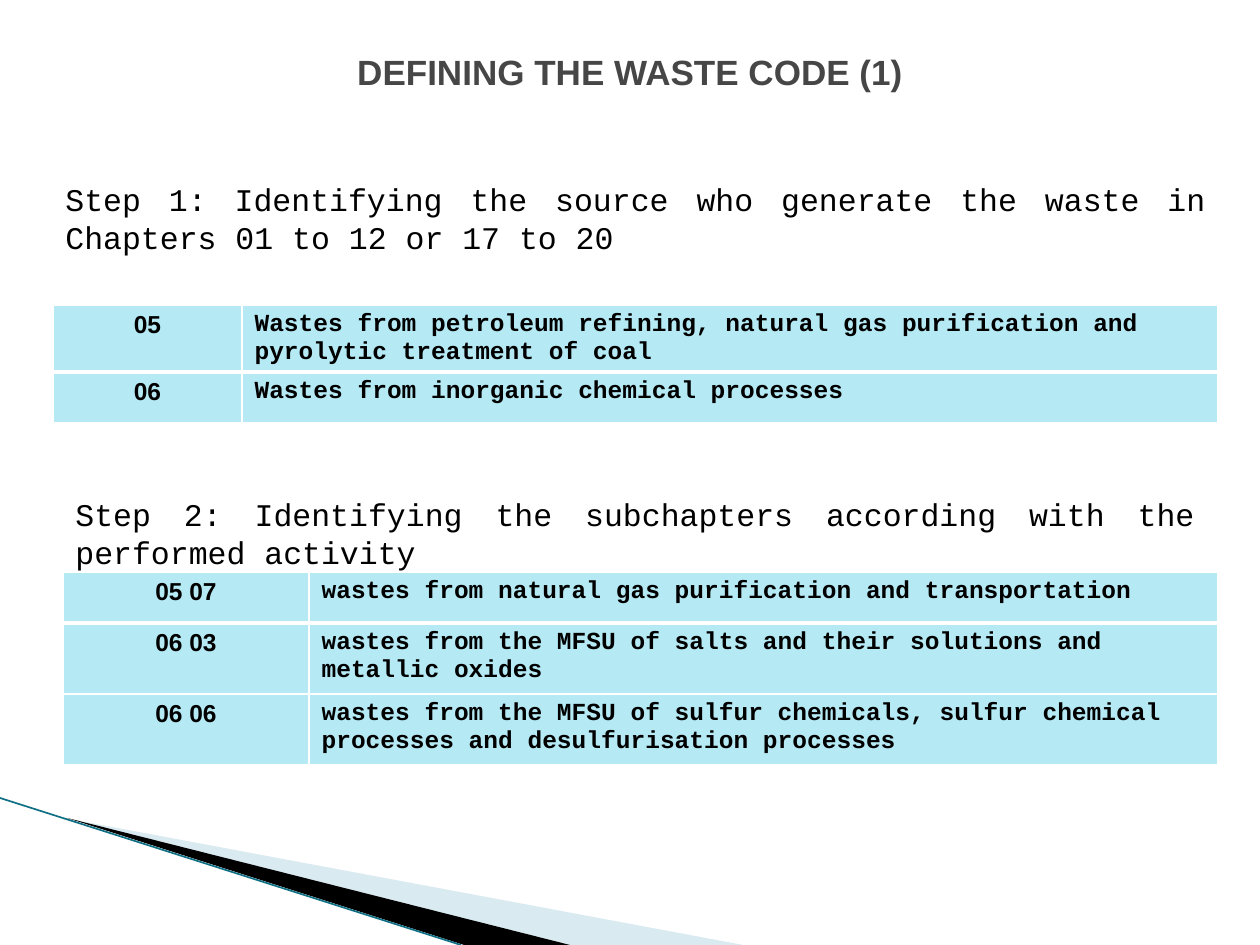
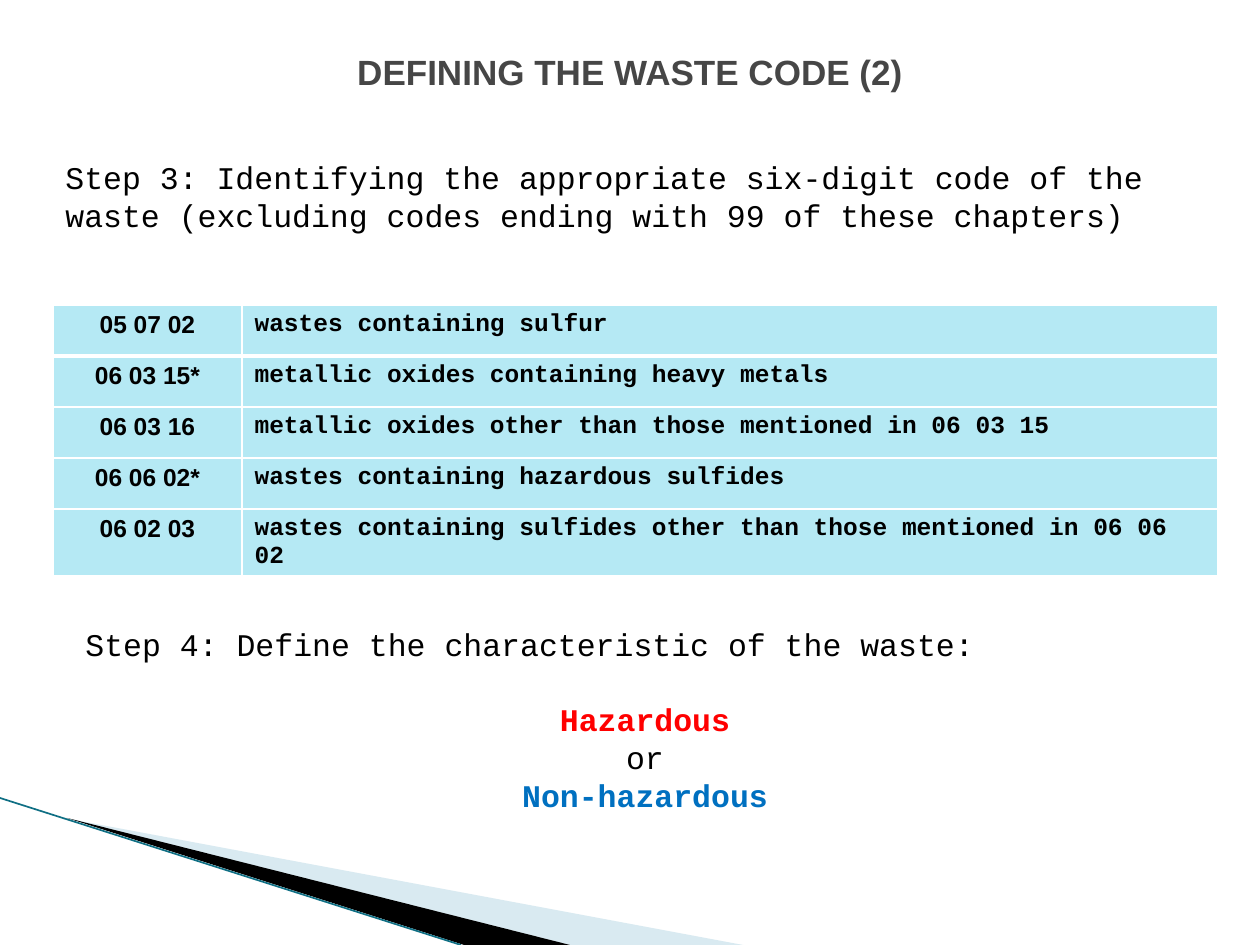
from dataclasses import dataclass
from typing import NamedTuple

from lxml.etree import SubElement
from pptx import Presentation
from pptx.dml.color import RGBColor
from pptx.enum.shapes import MSO_CONNECTOR
from pptx.enum.text import MSO_ANCHOR as Anchor, PP_ALIGN as Align
from pptx.oxml.ns import qn
from pptx.util import Emu, Pt

EMU_PER_PX = 914400 / 126
COLORS = {
    "title": "464646",
    "text": "000000",
    "cell": "B5E9F4",
    "border": "FFFFFF",
    "pale_wedge": "A0CBDC",
    "black_wedge": "000000",
    "edge": "0F6F84",
    "hazardous": "FF0000",
    "safe": "0070C0",
}
SANS, MONO = "Arial", "Courier New"


class Box(NamedTuple):
    """Position and size in px."""

    left: int
    top: int
    width: int
    height: int


class Line(NamedTuple):
    """One paragraph of a step."""

    text: str
    align: Align = Align.LEFT
    color: str = "text"
    bold: bool = False
    before: float = 0


@dataclass
class Step:
    """A step description and where it stands."""

    box: Box
    lines: list[Line]


@dataclass
class CodeTable:
    """Waste codes with their descriptions."""

    left: int
    top: int
    code_width: int
    text_width: int
    row_heights: list[int]
    rows: list[tuple[str, str]]


@dataclass
class Page:
    """Content of one slide."""

    title: str
    steps: list[Step]
    tables: list[CodeTable]


PAGES = [
    Page(
        "DEFINING THE WASTE CODE (1)",
        [
            Step(Box(53, 174, 1165, 82), [Line(
                "Step 1: Identifying the source who generate the waste in "
                "Chapters 01 to 12 or 17 to 20", Align.JUSTIFY)]),
            Step(Box(63, 489, 1144, 82), [Line(
                "Step 2: Identifying the subchapters according with the "
                "performed activity", Align.JUSTIFY)]),
        ],
        [
            CodeTable(53, 305, 189, 976, [67, 51], [
                ("05", "Wastes from petroleum refining, natural gas purification "
                       "and pyrolytic treatment of coal"),
                ("06", "Wastes from inorganic chemical processes"),
            ]),
            CodeTable(63, 572, 246, 909, [51, 71, 71], [
                ("05 07", "wastes from natural gas purification and transportation"),
                ("06 03", "wastes from the MFSU of salts and their solutions and "
                          "metallic oxides"),
                ("06 06", "wastes from the MFSU of sulfur chemicals, sulfur chemical "
                          "processes and desulfurisation processes"),
            ]),
        ],
    ),
    Page(
        "DEFINING THE WASTE CODE (2)",
        [
            Step(Box(53, 152, 1165, 89), [Line(
                "Step 3: Identifying the appropriate six-digit code of the waste "
                "(excluding codes ending with 99 of these chapters)")]),
            Step(Box(73, 619, 1144, 204), [
                Line("Step 4: Define the characteristic of the waste:", Align.JUSTIFY),
                Line("Hazardous", Align.CENTER, "hazardous", True, before=21.4),
                Line("or", Align.CENTER),
                Line("Non-hazardous", Align.CENTER, "safe", True),
            ]),
        ],
        [
            CodeTable(53, 305, 189, 976, [51, 51, 51, 51, 67], [
                ("05 07 02", "wastes containing sulfur"),
                ("06 03 15*", "metallic oxides containing heavy metals"),
                ("06 03 16", "metallic oxides other than those mentioned in 06 03 15"),
                ("06 06 02*", "wastes containing hazardous sulfides"),
                ("06 02 03", "wastes containing sulfides other than those mentioned "
                             "in 06 06 02"),
            ]),
        ],
    ),
]


def px(length: float) -> Emu:
    """Turn px into EMU."""
    return Emu(round(length * EMU_PER_PX))


def rgb(name: str) -> RGBColor:
    """Look up a named colour."""
    return RGBColor.from_string(COLORS[name])


def write(paragraph, text: str, *, font: str = MONO, size: int = 18,
          color: str = "text", bold: bool = False, align: Align = Align.LEFT,
          before: float = 0) -> None:
    """Write formatted text into a paragraph."""
    paragraph.alignment = align
    if before:
        paragraph.space_before = Pt(before)
    run = paragraph.add_run()
    run.text = text
    run.font.name, run.font.size, run.font.bold = font, Pt(size), bold
    run.font.color.rgb = rgb(color)


def add_frame(slide, box: Box, anchor: Anchor = Anchor.TOP):
    """Add a wrapping text frame."""
    frame = slide.shapes.add_textbox(*map(px, box)).text_frame
    frame.word_wrap = True
    frame.vertical_anchor = anchor
    return frame


def draw_wedge(slide, points: list[tuple[int, int]], color: str,
               opacity: int = 100) -> None:
    """Draw one filled corner wedge."""
    builder = slide.shapes.build_freeform(*points[0], scale=EMU_PER_PX)
    builder.add_line_segments(points[1:], close=True)
    wedge = builder.convert_to_shape()
    wedge.shadow.inherit = False
    wedge.fill.solid()
    wedge.fill.fore_color.rgb = rgb(color)
    wedge.line.fill.background()
    if opacity < 100:
        tint = wedge.fill._xPr.find(".//" + qn("a:srgbClr"))
        SubElement(tint, qn("a:alpha"), val=str(opacity * 1000))


def draw_corner(slide) -> None:
    """Draw the decoration at the bottom left."""
    draw_wedge(slide, [(69, 819), (743, 945), (570, 945)], "pale_wedge", 40)
    draw_wedge(slide, [(67, 818), (570, 945), (464, 945)], "black_wedge")
    edge = slide.shapes.add_connector(
        MSO_CONNECTOR.STRAIGHT, px(0), px(798), px(461), px(945))
    edge.line.color.rgb = rgb("edge")
    edge.line.width = Pt(0.95)
    SubElement(edge._element.spPr, qn("a:effectLst"))


def set_borders(cell, top: int, bottom: int) -> None:
    """Give a cell its border lines, with widths in points."""
    properties = cell._tc.get_or_add_tcPr()
    for side, width in {"L": 1, "R": 1, "T": top, "B": bottom}.items():
        border = SubElement(properties, qn(f"a:ln{side}"), w=str(Pt(width)))
        fill = SubElement(border, qn("a:solidFill"))
        SubElement(fill, qn("a:srgbClr"), val=COLORS["border"])


def draw_codes(slide, codes: CodeTable) -> None:
    """Draw a table of waste codes."""
    widths = (codes.code_width, codes.text_width)
    box = Box(codes.left, codes.top, sum(widths), sum(codes.row_heights))
    table = slide.shapes.add_table(len(codes.rows), 2, *map(px, box)).table
    table.first_row = table.horz_banding = False
    for column, width in zip(table.columns, widths):
        column.width = px(width)
    formats = ((SANS, Align.CENTER), (MONO, Align.LEFT))
    for index, (texts, height) in enumerate(zip(codes.rows, codes.row_heights)):
        table.rows[index].height = px(height)
        for column, (text, (font, align)) in enumerate(zip(texts, formats)):
            cell = table.cell(index, column)
            set_borders(cell, top=3 if index == 1 else 1,
                        bottom=3 if index == 0 else 1)
            cell.margin_bottom = px(2)
            cell.fill.solid()
            cell.fill.fore_color.rgb = rgb("cell")
            write(cell.text_frame.paragraphs[0], text, font=font, size=14,
                  bold=True, align=align)


def draw_step(slide, step: Step) -> None:
    """Draw a step description."""
    frame = add_frame(slide, step.box)
    for index, line in enumerate(step.lines):
        paragraph = frame.add_paragraph() if index else frame.paragraphs[0]
        write(paragraph, line.text, align=line.align, color=line.color,
              bold=line.bold, before=line.before)


def draw_page(deck, page: Page) -> None:
    """Add one slide with all its parts."""
    slide = deck.slides.add_slide(deck.slide_layouts[6])
    draw_corner(slide)
    title = add_frame(slide, Box(21, 38, 1218, 67), Anchor.MIDDLE)
    write(title.paragraphs[0], page.title, font=SANS, size=20, color="title",
          bold=True, align=Align.CENTER)
    for codes in page.tables:
        draw_codes(slide, codes)
    for step in page.steps:
        draw_step(slide, step)


def main() -> None:
    """Build and save the deck."""
    deck = Presentation()
    deck.slide_width, deck.slide_height = px(1260), px(945)
    for page in PAGES:
        draw_page(deck, page)
    deck.save("out.pptx")


if __name__ == "__main__":
    main()
